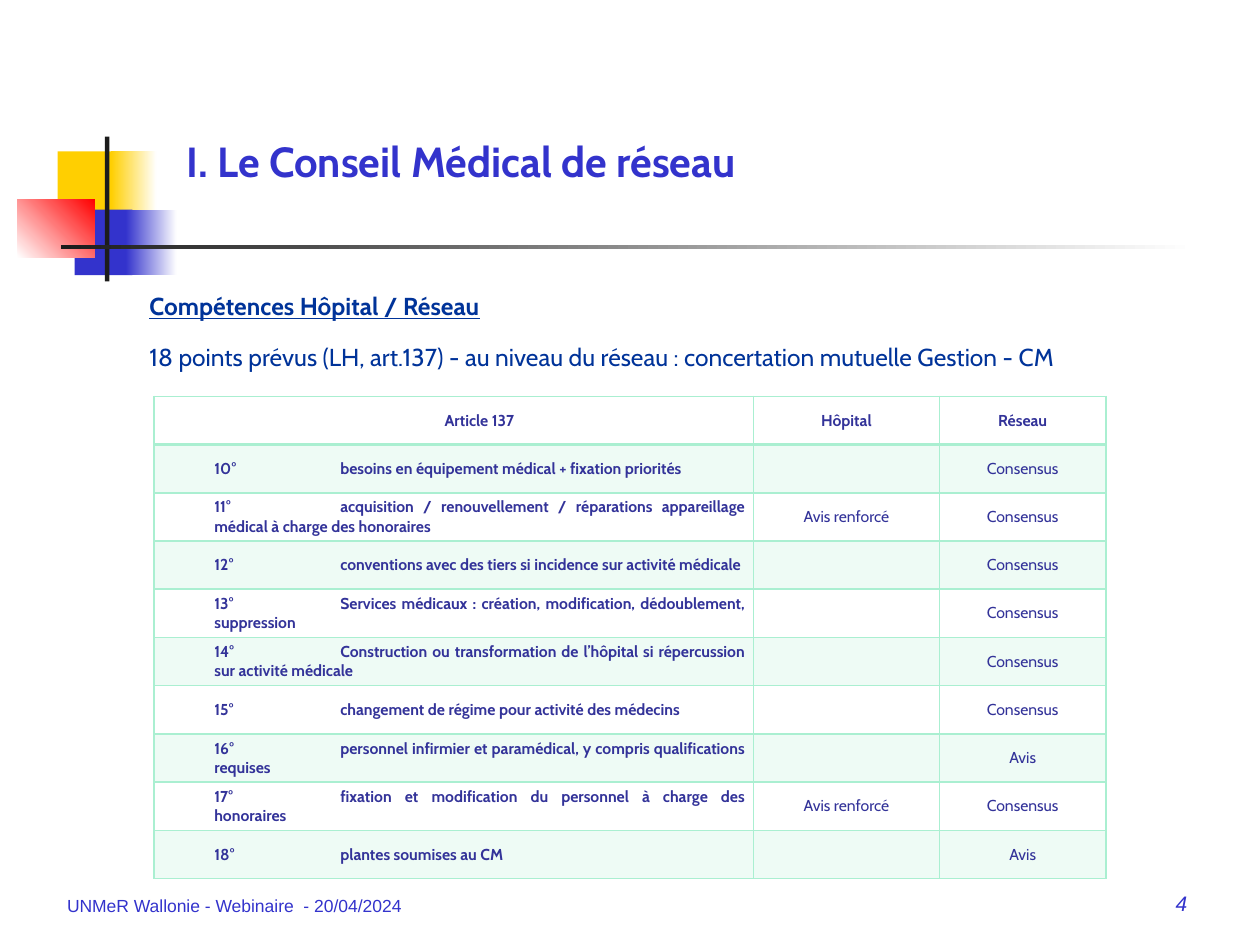
"""Build the slide on hospital and network competences of the medical council."""
from lxml import etree
from pptx import Presentation
from pptx.dml.color import RGBColor
from pptx.enum.shapes import MSO_SHAPE
from pptx.enum.text import MSO_ANCHOR, PP_ALIGN
from pptx.oxml.ns import qn
from pptx.util import Pt

RECTANGLE = MSO_SHAPE.RECTANGLE
TOP, MIDDLE, BOTTOM = MSO_ANCHOR.TOP, MSO_ANCHOR.MIDDLE, MSO_ANCHOR.BOTTOM
LEFT, CENTER, RIGHT, JUSTIFY = PP_ALIGN.LEFT, PP_ALIGN.CENTER, PP_ALIGN.RIGHT, PP_ALIGN.JUSTIFY
BLUE, NAVY, INDIGO, MINT = "3333CC", "003399", "333399", "AAEFD1"
WHITE, YELLOW, RED, BLACK = "FFFFFF", "FFCF01", "FF0000", "1C1C1C"


def rgb(value):
    return RGBColor.from_string(value)


def style(paragraph, face, size, color, bold=False, align=LEFT, before=0, after=0):
    font = paragraph.font
    font.name, font.size, font.bold = face, Pt(size), bold
    font.color.rgb = rgb(color)
    paragraph.alignment = align
    paragraph.space_before, paragraph.space_after = Pt(before), Pt(after)


deck = Presentation()
deck.slide_width, deck.slide_height = Pt(720), Pt(540)
slide = deck.slides.add_slide(deck.slide_layouts[6])

ornaments = [
    (33, 86.5, 34.5, 37.5, [YELLOW], 0),
    (63.5, 86.5, 26, 37.5, [YELLOW, WHITE], 0),
    (42.7, 119.8, 33, 37.5, [BLUE], 0),
    (72, 119.8, 29, 37.5, [BLUE, WHITE], 0),
    (10, 113.8, 44.2, 33.5, [WHITE, RED], 45),
    (60, 78, 2.5, 82.8, [BLACK], 0),
    (34.8, 140.1, 648, 2.5, [BLACK, WHITE], 0),
]
for left, top, width, height, colors, angle in ornaments:
    ornament = slide.shapes.add_shape(RECTANGLE, Pt(left), Pt(top), Pt(width), Pt(height))
    ornament.shadow.inherit = False
    ornament.line.fill.background()
    if len(colors) == 1:
        ornament.fill.solid()
        ornament.fill.fore_color.rgb = rgb(colors[0])
    else:
        ornament.fill.gradient()
        ornament.fill.gradient_angle = angle
        for stop, color in zip(ornament.fill.gradient_stops, colors):
            stop.color.rgb = rgb(color)

texts = [
    (31.2, 491, 215.3, 36, BOTTOM, ["UNMeR Wallonie - Webinaire  - 20/04/2024"], "Arial", 10, BLUE, LEFT),
    (535.7, 491, 149.8, 36, BOTTOM, ["4"], "Arial", 12, BLUE, RIGHT),
    (99.4, 50.2, 577.4, 59.8, BOTTOM, ["I. Le Conseil Médical de réseau"], "Cabin", 24, BLUE, LEFT),
    (78.3, 163, 619.2, 53.3, TOP, [
        "Compétences Hôpital / Réseau",
        "18 points prévus (LH, art.137) - au niveau du réseau : concertation mutuelle Gestion - CM",
    ], "Cabin", 14, NAVY, LEFT),
]
frames = []
for left, top, width, height, anchor, lines, face, size, color, align in texts:
    frame = slide.shapes.add_textbox(Pt(left), Pt(top), Pt(width), Pt(height)).text_frame
    frame.word_wrap, frame.vertical_anchor = True, anchor
    frame.text = "\n".join(lines)
    for paragraph in frame.paragraphs:
        style(paragraph, face, size, color, align=align)
    frames.append(frame)
footer, page_number, title, intro = frames
page_number.paragraphs[0].font.italic = True
title.paragraphs[0].font.bold = True
heading, summary = intro.paragraphs
heading.font.bold = heading.font.underline = True
heading.space_after, summary.space_after = Pt(12), Pt(10)

competences = [
    ("Article 137", "Hôpital", "Réseau"),
    ("10°\tbesoins en équipement médical + fixation priorités", "", "Consensus"),
    ("11°\tacquisition / renouvellement / réparations appareillage médical à charge des honoraires",
     "Avis renforcé", "Consensus"),
    ("12°\tconventions avec des tiers si incidence sur activité médicale", "", "Consensus"),
    ("13°\tServices médicaux : création, modification, dédoublement, suppression", "", "Consensus"),
    ("14°\tConstruction ou transformation de l’hôpital si répercussion sur activité médicale",
     "", "Consensus"),
    ("15°\tchangement de régime pour activité des médecins", "", "Consensus"),
    ("16°\tpersonnel infirmier et paramédical, y compris qualifications requises", "", "Avis"),
    ("17°\tfixation et modification du personnel à charge des honoraires",
     "Avis renforcé", "Consensus"),
    ("18°\tplantes soumises au CM", "", "Avis"),
]
table = slide.shapes.add_table(
    len(competences), 3, Pt(88), Pt(226.5), Pt(544), Pt(275.8)).table
table.first_row = table.horz_banding = False
for column, width in zip(table.columns, (342.6, 106.2, 95.2)):
    column.width = Pt(width)
for row in table.rows:
    row.height = Pt(27.58)

for r, entries in enumerate(competences):
    for c, entry in enumerate(entries):
        cell = table.cell(r, c)
        cell.text = entry
        cell.vertical_anchor = MIDDLE
        cell.margin_left = cell.margin_right = Pt(5.2)
        cell.margin_top = cell.margin_bottom = 0
        paragraph = cell.text_frame.paragraphs[0]
        style(paragraph, "Cabin", 9, INDIGO, bold=r == 0 or c == 0,
              align=JUSTIFY if r and c == 0 else CENTER, before=3, after=3)
        properties = cell._tc.get_or_add_tcPr()
        if c == 0:
            indents = paragraph._p.get_or_add_pPr()
            indents.set("marL", str(Pt(29.3)))
            indents.set("defTabSz", str(Pt(72)))
        if r % 2:
            cell.fill.solid()
            cell.fill.fore_color.rgb = rgb(MINT)
            tint = properties.find(qn("a:solidFill")).find(qn("a:srgbClr"))
            etree.SubElement(tint, qn("a:alpha"), val="20000")
        else:
            cell.fill.background()
        for position, side in enumerate(("lnL", "lnR", "lnT", "lnB")):
            heavy = (r, side) in ((0, "lnB"), (1, "lnT"))
            border = etree.Element(qn("a:" + side), w=str(Pt(2 if heavy else 1)))
            paint = etree.SubElement(border, qn("a:solidFill"))
            etree.SubElement(paint, qn("a:srgbClr"), val=MINT)
            properties.insert(position, border)

deck.save("out.pptx")
